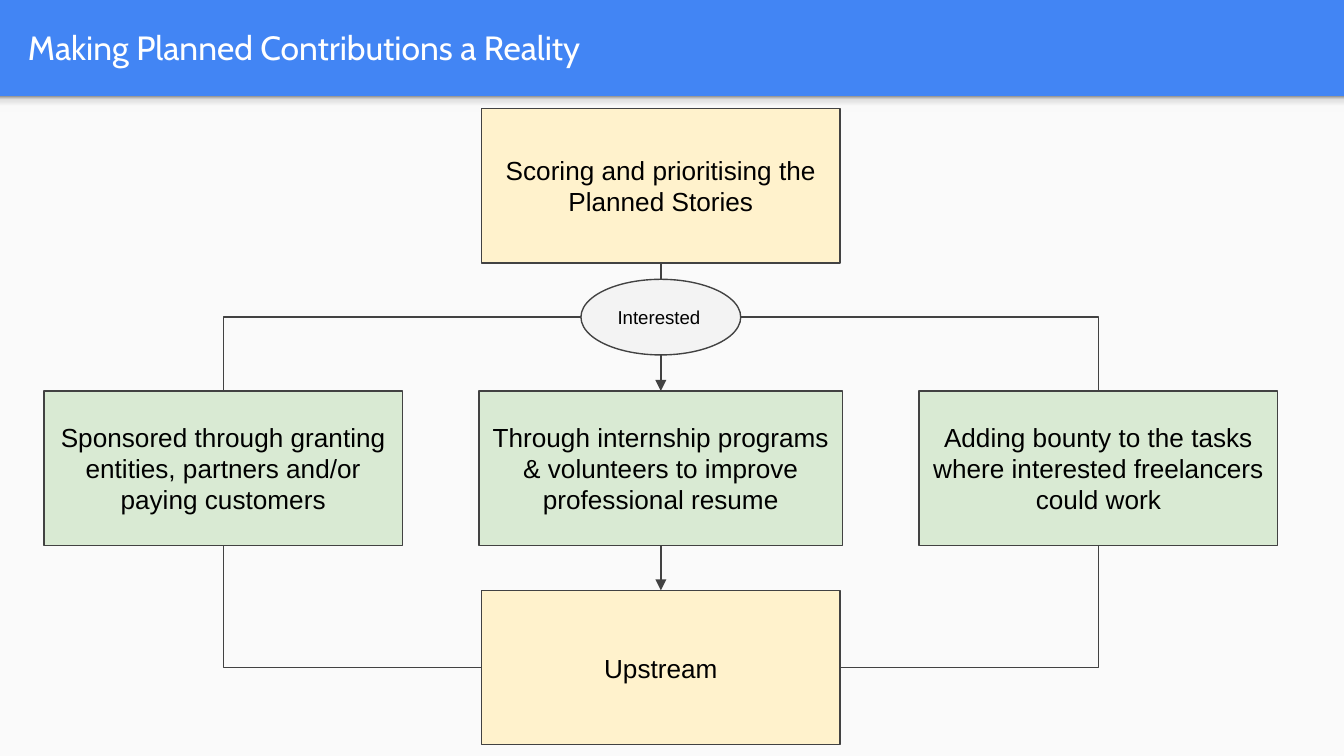
from lxml import etree
from pptx import Presentation
from pptx import util as u
from pptx.dml import color
from pptx.enum import shapes, text
from pptx.oxml import ns

SLIDE_WIDTH, SLIDE_HEIGHT = 25.4, 14.29
HEADER_HEIGHT = 1.82
BOX_WIDTH, BOX_HEIGHT = 6.78, 2.92
COLUMN_CENTER, COLUMN_STEP = 4.22, 8.27
TOP_ROW, OPTION_ROW, BOTTOM_ROW = 2.05, 7.39, 11.16
LINE = "424242"
OPTIONS = [
    ("Sponsored through granting entities, partners and/or paying customers", BOX_WIDTH),
    ("Through internship programs & volunteers to improve professional resume", 6.88),
    ("Adding bounty to the tasks where interested freelancers could work", BOX_WIDTH),
]
SHADOW_STOPS = [(0, "F9F9F9"), (36, "F9F9F9"), (80, "DEDEDE"), (100, "999999")]


def rgb(value):
    """Turn a hex string into a colour."""
    return color.RGBColor.from_string(value)


def set_text(shape, words, size, font="Arial", ink="000000", align=text.PP_ALIGN.CENTER):
    """Write one vertically centred paragraph in a shape."""
    frame = shape.text_frame
    layout = {"word_wrap": True, "vertical_anchor": text.MSO_ANCHOR.MIDDLE}
    sides = ("left", "top", "right", "bottom")
    layout.update({f"margin_{side}": u.Cm(0.25) for side in sides})
    for name, value in layout.items():
        setattr(frame, name, value)
    paragraph = frame.paragraphs[0]
    paragraph.alignment = align
    run = paragraph.add_run()
    for name, value in {"name": font, "size": u.Pt(size)}.items():
        setattr(run.font, name, value)
    run.font.color.rgb = rgb(ink)
    run.text = words


def add_block(slide, box, fill, outline=None, kind=shapes.MSO_SHAPE.RECTANGLE):
    """Add a filled shape in a box given in centimetres."""
    shape = slide.shapes.add_shape(kind, *map(u.Cm, box))
    shape.shadow.inherit = False
    shape.fill.solid()
    shape.fill.fore_color.rgb = rgb(fill)
    if outline:
        shape.line.color.rgb = rgb(outline)
        shape.line.width = u.Pt(0.75)
    else:
        shape.line.fill.background()
    return shape


def add_box(slide, center, top, words, fill, width=BOX_WIDTH):
    """Add a labelled flow box centred on a column."""
    shape = add_block(slide, (center - width / 2, top, width, BOX_HEIGHT), fill, LINE)
    set_text(shape, words, 14)
    return shape


def side_point(shape, side):
    """Return the middle of a side: 0 top, 1 left, 2 bottom, 3 right."""
    across, down = [(0.5, 0), (0, 0.5), (0.5, 1), (1, 0.5)][side]
    return int(shape.left + shape.width * across), int(shape.top + shape.height * down)


def add_link(slide, start, start_side, end, end_side, bent=False):
    """Link two shapes with a straight arrow or a plain one-corner line."""
    kind = shapes.MSO_CONNECTOR.ELBOW if bent else shapes.MSO_CONNECTOR.STRAIGHT
    points = side_point(start, start_side) + side_point(end, end_side)
    connector = slide.shapes.add_connector(kind, *points)
    connector.line.color.rgb = rgb(LINE)
    connector.line.width = u.Pt(0.75)
    properties = connector._element.spPr
    etree.SubElement(properties, ns.qn("a:effectLst"))
    if bent:
        properties.find(ns.qn("a:prstGeom")).set("prst", "bentConnector2")
    else:
        connector.begin_connect(start, start_side)
        connector.end_connect(end, end_side)
        outline = properties.find(ns.qn("a:ln"))
        etree.SubElement(outline, ns.qn("a:tailEnd"), type="triangle")


def add_header(slide, left, top, width, height):
    """Add the title band and the soft shadow below it."""
    add_block(slide, (left, top, width, height), "4285F4")
    shadow = add_block(slide, (left, top + height, width, 0.3), "F9F9F9")
    shadow.fill.gradient()
    shadow.fill.gradient_angle = 90
    stops = shadow._element.spPr.find(ns.qn("a:gradFill")).find(ns.qn("a:gsLst"))
    for stop in list(stops):
        stops.remove(stop)
    for position, value in SHADOW_STOPS:
        stop = etree.SubElement(stops, ns.qn("a:gs"), pos=str(position * 1000))
        etree.SubElement(stop, ns.qn("a:srgbClr"), val=value)
    title_box = (left + 0.28, top + 0.05, width - 0.89, height - 0.14)
    title = slide.shapes.add_textbox(*map(u.Cm, title_box))
    set_text(title, "Making Planned Contributions a Reality", 18, "Cabin", "FFFFFF",
             text.PP_ALIGN.LEFT)


def add_flow(slide, first_center, step):
    """Add the flow from scoring through three options to upstream."""
    centers = [first_center + step * column for column in range(len(OPTIONS))]
    middle_center = centers[1]
    scoring = add_box(slide, middle_center, TOP_ROW,
                      "Scoring and prioritising the Planned Stories", "FFF2CC")
    left, middle, right = [
        add_box(slide, center, OPTION_ROW, words, "D9EAD3", width)
        for center, (words, width) in zip(centers, OPTIONS)
    ]
    upstream = add_box(slide, middle_center, BOTTOM_ROW, "Upstream", "FFF2CC")
    add_link(slide, scoring, 2, middle, 0)
    add_link(slide, middle, 2, upstream, 0)
    interested = add_block(slide, (middle_center - 1.51, 5.28, 3.02, 1.43), "F3F3F3", LINE,
                           shapes.MSO_SHAPE.OVAL)
    set_text(interested, "Interested", 10, align=text.PP_ALIGN.LEFT)
    for option, side in ((left, 1), (right, 3)):
        add_link(slide, interested, side, option, 0, bent=True)
        add_link(slide, upstream, side, option, 2, bent=True)


def main():
    """Build and save the presentation."""
    presentation = Presentation()
    presentation.slide_width = u.Cm(SLIDE_WIDTH)
    presentation.slide_height = u.Cm(SLIDE_HEIGHT)
    slide = presentation.slides.add_slide(presentation.slide_layouts[6])
    slide.background.fill.solid()
    slide.background.fill.fore_color.rgb = rgb("FAFAFA")
    add_header(slide, 0, 0, SLIDE_WIDTH, HEADER_HEIGHT)
    add_flow(slide, COLUMN_CENTER, COLUMN_STEP)
    presentation.save("out.pptx")


if __name__ == "__main__":
    main()
